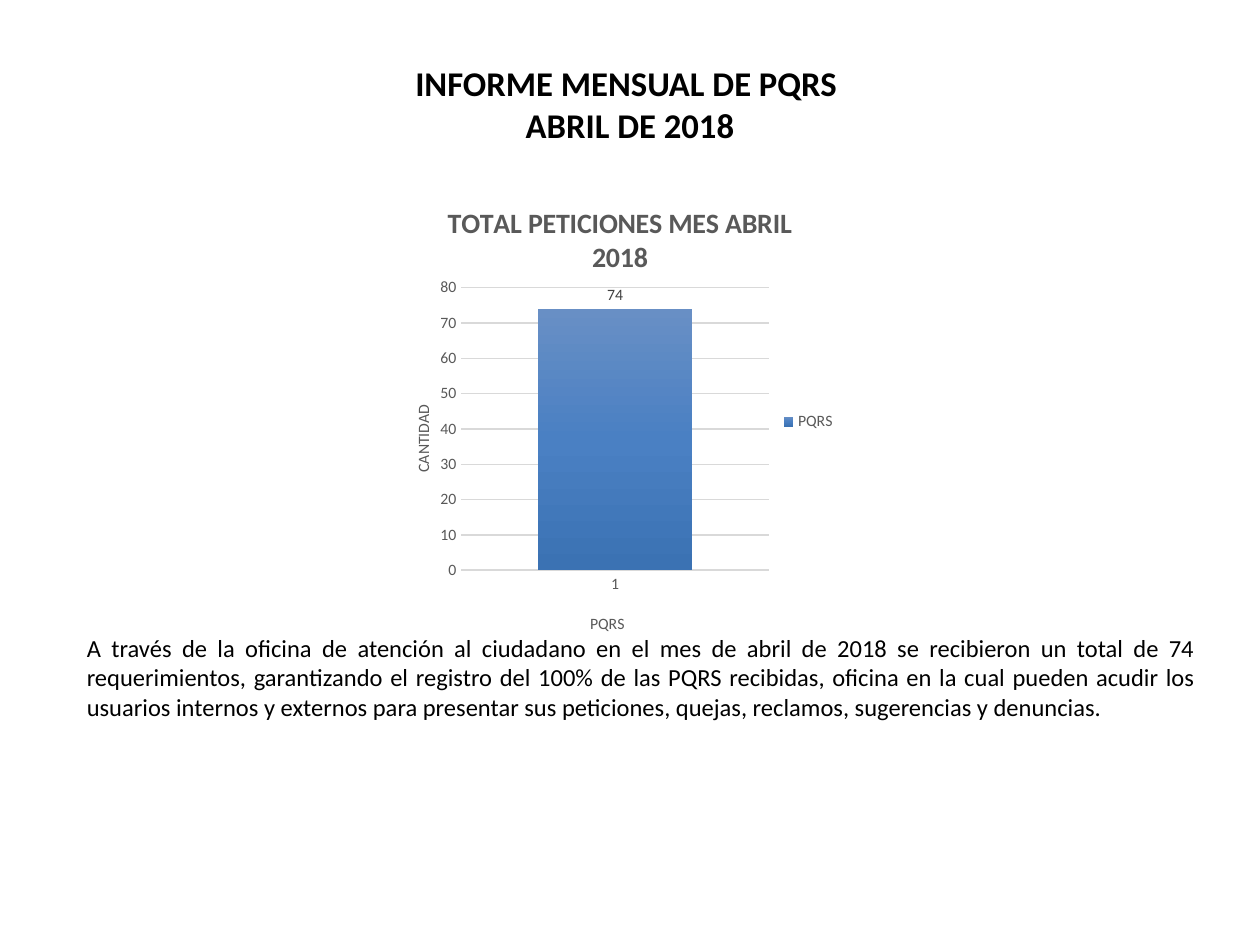
import copy
from lxml import etree
from pptx import Presentation
from pptx import util as u
from pptx.chart import data as chart_data
from pptx.dml import color
from pptx.enum import chart as charts, text
from pptx.oxml import ns

THEME = {
    "font": "Calibri",
    "black": "000000", "heading": "595959", "label": "404040", "grid": "D9D9D9",
    "bar": [(0, "688FC5"), (0.5, "4A80C3"), (1, "3B72B3")],
    "title_size": 19.8, "chart_title_size": 16, "body_size": 14, "chart_size": 9,
}


def style_font(font, size, colour, bold=False):
    font.name = THEME["font"]
    font.size = u.Pt(THEME[size])
    font.bold = bold
    font.color.rgb = color.RGBColor.from_string(THEME[colour])


def place(element, index, target=None, **position):
    for old in element.findall(ns.qn("c:layout")):
        element.remove(old)
    layout = etree.Element(ns.qn("c:layout"))
    manual = etree.SubElement(layout, ns.qn("c:manualLayout"))
    if target:
        etree.SubElement(manual, ns.qn("c:layoutTarget")).set("val", target)
    for axis_name in ("x", "y"):
        etree.SubElement(manual, ns.qn(f"c:{axis_name}Mode")).set("val", "edge")
    for key, value in position.items():
        etree.SubElement(manual, ns.qn(f"c:{key}")).set("val", str(value))
    element.insert(index, layout)


presentation = Presentation()
presentation.slide_width = u.Cm(25.4)
presentation.slide_height = u.Cm(19.05)
slide = presentation.slides.add_slide(presentation.slide_layouts[6])

text_blocks = [
    ("INFORME MENSUAL DE PQRS \nABRIL DE 2018",
     (1.27, 0.8, 22.86, 2.57), "title_size", True,
     text.PP_ALIGN.CENTER, text.MSO_ANCHOR.MIDDLE),
    ("A través de la oficina de atención al ciudadano en el mes de abril de 2018 "
     "se recibieron un total de 74 requerimientos, garantizando el registro del 100% "
     "de las PQRS recibidas, oficina en la cual pueden acudir los usuarios internos y "
     "externos para presentar sus peticiones, quejas, reclamos, sugerencias y denuncias.",
     (1.5, 12.63, 22.86, 2.1), "body_size", False,
     text.PP_ALIGN.JUSTIFY, text.MSO_ANCHOR.TOP),
]
for words, box, size, bold, alignment, anchor in text_blocks:
    shape = slide.shapes.add_textbox(*map(u.Cm, box))
    frame = shape.text_frame
    frame.word_wrap = True
    frame.vertical_anchor = anchor
    frame.text = words
    for paragraph in frame.paragraphs:
        paragraph.alignment = alignment
        for run in paragraph.runs:
            style_font(run.font, size, "black", bold)

requests = chart_data.CategoryChartData()
requests.categories = ["1"]
requests.add_series("PQRS", [74])
chart = slide.shapes.add_chart(
    charts.XL_CHART_TYPE.COLUMN_CLUSTERED,
    u.Cm(7.7), u.Cm(3.5), u.Cm(9.4), u.Cm(10), requests).chart
style_font(chart.font, "chart_size", "heading")

chart.has_title = True
category_axis, value_axis = chart.category_axis, chart.value_axis
titles = [
    (chart.chart_title, "TOTAL PETICIONES MES ABRIL 2018", "chart_title_size", True, 0.13, 0.05),
    (category_axis.axis_title, "PQRS", "chart_size", False, 0.44, 0.88),
    (value_axis.axis_title, "CANTIDAD", "chart_size", False, 0.06, 0.46),
]
for title, words, size, bold, x, y in titles:
    title.text_frame.text = words
    style_font(title.text_frame.paragraphs[0].runs[0].font, size, "heading", bold)
    place(title._element, 1, x=x, y=y)
place(chart._chartSpace.chart.plotArea, 0, "inner", x=0.17, y=0.23, w=0.66, h=0.57)

for axis in (category_axis, value_axis):
    axis.major_tick_mark = axis.minor_tick_mark = charts.XL_TICK_MARK.NONE
    style_font(axis.tick_labels.font, "chart_size", "heading")
value_axis.minimum_scale = 0
value_axis.maximum_scale = 80
value_axis.major_unit = 10
value_axis.format.line.fill.background()
for line, width in ((category_axis.format.line, 1),
                    (value_axis.major_gridlines.format.line, 0.75)):
    line.color.rgb = color.RGBColor.from_string(THEME["grid"])
    line.width = u.Pt(width)

chart.has_legend = True
chart.legend.position = charts.XL_LEGEND_POSITION.RIGHT
chart.legend.include_in_layout = False
style_font(chart.legend.font, "chart_size", "heading")

plot = chart.plots[0]
plot.gap_width = 100
plot.overlap = -24
plot.vary_by_categories = False
series = plot.series[0]
fill = series.format.fill
fill.gradient()
fill.gradient_angle = 270
stop_list = fill.gradient_stops[0]._gs.getparent()
stop_list.append(copy.deepcopy(stop_list[0]))
for stop, (position, colour) in zip(fill.gradient_stops, THEME["bar"]):
    stop.position = position
    stop.color.rgb = color.RGBColor.from_string(colour)

labels = series.data_labels
labels.show_value = True
labels.position = charts.XL_LABEL_POSITION.OUTSIDE_END
style_font(labels.font, "chart_size", "label")

presentation.save("out.pptx")
